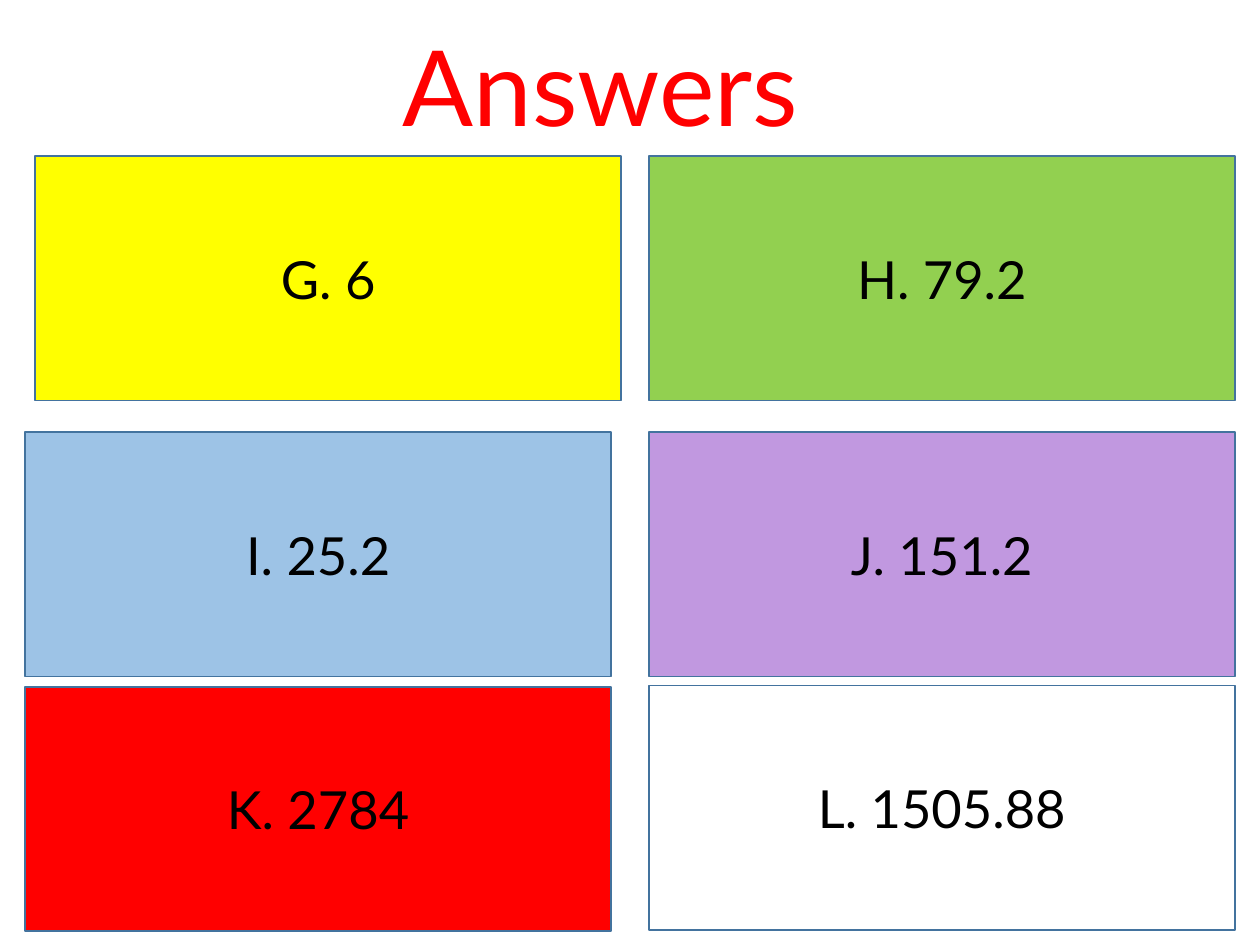
from pptx import Presentation
from pptx.dml.color import RGBColor
from pptx.enum.shapes import MSO_SHAPE
from pptx.enum.text import MSO_ANCHOR, MSO_AUTO_SIZE, PP_ALIGN
from pptx.util import Inches, Pt

COLS, ROWS = 100, 75
WIDE, HIGH = Inches(10), Inches(7.5)
LEFT, RIGHT = 2, 51.5
TOPS = 12.4, 34.3, 54.4
CARD = 46.5, 19.4
CARDS = [
    [("G. 6", "FFFF00"), ("H. 79.2", "92D050")],
    [("I. 25.2", "9DC3E6"), ("J. 151.2", "C198E0")],
    [("K. 2784", "FF0000"), ("L. 1505.88", None)],
]
NUDGE = {"G. 6": (0.8, 0), "K. 2784": (0, 0.1)}


def tint(code):
    """Turn a hex string into a colour."""
    return RGBColor.from_string(code)


def place(box):
    """Turn columns and rows of the grid into slide lengths."""
    x, y, w, h = box
    return (round(x * WIDE / COLS), round(y * HIGH / ROWS),
            round(w * WIDE / COLS), round(h * HIGH / ROWS))


def write(frame, text, size, code):
    """Add one centred run of text to a frame."""
    frame.word_wrap = True
    line = frame.paragraphs[0]
    line.alignment = PP_ALIGN.CENTER
    run = line.add_run()
    run.text = text
    run.font.name = "Lato"
    run.font.size = Pt(size)
    run.font.color.rgb = tint(code)


def add_title(slide, box, text):
    """Place the title in its box."""
    frame = slide.shapes.add_textbox(*place(box)).text_frame
    write(frame, text, 60, "FF0000")
    frame.auto_size = MSO_AUTO_SIZE.SHAPE_TO_FIT_TEXT


def add_card(slide, box, text, fill):
    """Place one answer card in its box."""
    card = slide.shapes.add_shape(MSO_SHAPE.RECTANGLE, *place(box))
    card.shadow.inherit = False
    if fill:
        card.fill.solid()
        card.fill.fore_color.rgb = tint(fill)
    else:
        card.fill.background()
    card.line.color.rgb = tint("43739E")
    card.line.width = Pt(1)
    card.text_frame.vertical_anchor = MSO_ANCHOR.MIDDLE
    write(card.text_frame, text, 30, "000000")


def add_cards(slide, lefts, tops):
    """Place all answer cards on their columns and rows."""
    for top, row in zip(tops, CARDS):
        for left, (text, fill) in zip(lefts, row):
            right, down = NUDGE.get(text, (0, 0))
            add_card(slide, (left + right, top + down, *CARD), text, fill)


def main():
    """Build and save the slide."""
    deck = Presentation()
    deck.slide_width, deck.slide_height = WIDE, HIGH
    slide = deck.slides.add_slide(deck.slide_layouts[6])
    add_title(slide, (12.9, 1.2, 69.5, 11.1), "Answers")
    add_cards(slide, (LEFT, RIGHT), TOPS)
    deck.save("out.pptx")


if __name__ == "__main__":
    main()
